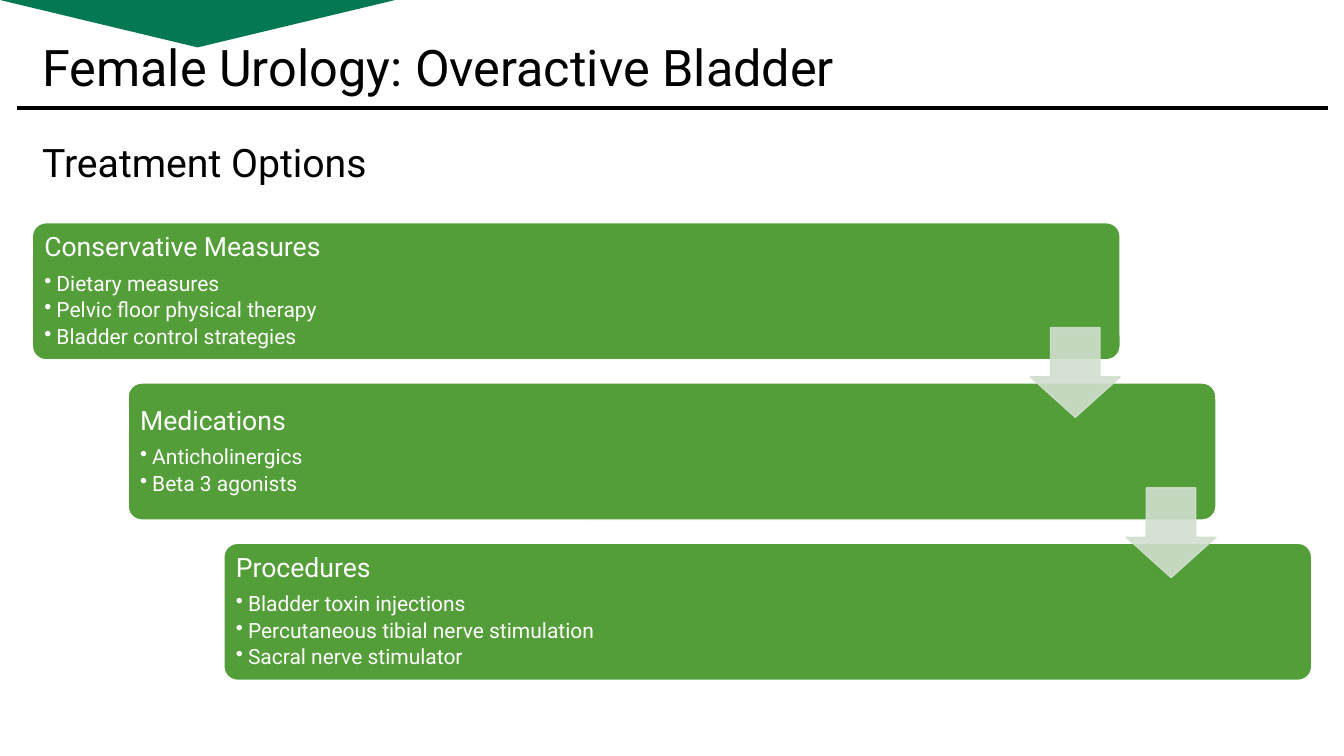
"""Build the overactive bladder treatment slide with its stepped cards."""
from dataclasses import dataclass

import lxml.etree
import pptx
import pptx.dml.color
import pptx.enum.shapes
import pptx.enum.text
import pptx.oxml.ns
import pptx.util

Inches = pptx.util.Inches
Pt = pptx.util.Pt
Shape = pptx.enum.shapes.MSO_SHAPE
Anchor = pptx.enum.text.MSO_ANCHOR
qn = pptx.oxml.ns.qn

FONT = "Roboto"
COLORS = {
    "banner": "047853",
    "card": "549E39",
    "arrow": "D1DFCE",
    "black": "000000",
    "white": "FFFFFF",
}
CARD_LEFT, CARD_TOP = 0.32, 2.21
CARD_WIDTH, CARD_HEIGHT = 10.79, 1.36
STEP_X, STEP_Y = 0.95, 1.59
ARROW_LEFT, ARROW_TOP, ARROW_SIZE = 10.22, 3.25, 0.89
BULLET_INDENT = Inches(0.12)


@dataclass(frozen=True)
class Treatment:
    heading: str
    options: tuple[str, ...]


TREATMENTS = (
    Treatment(
        "Conservative Measures",
        ("Dietary measures", "Pelvic floor physical therapy", "Bladder control strategies"),
    ),
    Treatment("Medications", ("Anticholinergics", "Beta 3 agonists")),
    Treatment(
        "Procedures",
        (
            "Bladder toxin injections",
            "Percutaneous tibial nerve stimulation",
            "Sacral nerve stimulator",
        ),
    ),
)


def rgb(name: str) -> pptx.dml.color.RGBColor:
    return pptx.dml.color.RGBColor.from_string(COLORS[name])


def add_span(para, text: str, size: float, color: str) -> None:
    span = para.add_run()
    span.text = text
    span.font.name = FONT
    span.font.size = Pt(size)
    span.font.color.rgb = rgb(color)


def add_label(page, text: str, left: float, top: float, width: float,
              height: float, size: float):
    box = page.shapes.add_textbox(Inches(left), Inches(top), Inches(width), Inches(height))
    add_span(box.text_frame.paragraphs[0], text, size, "black")
    return box.text_frame


def add_filled(page, kind, left: float, top: float, width: float, height: float, fill: str):
    shape = page.shapes.add_shape(
        kind, Inches(left), Inches(top), Inches(width), Inches(height)
    )
    shape.shadow.inherit = False
    shape.fill.solid()
    shape.fill.fore_color.rgb = rgb(fill)
    return shape


def add_banner(page) -> None:
    banner = add_filled(page, Shape.ISOSCELES_TRIANGLE, 0, 0, 3.92, 0.47, "banner")
    banner.rotation = 180
    banner.line.fill.background()


def add_title_rule(page) -> None:
    rule = page.shapes.add_connector(
        pptx.enum.shapes.MSO_CONNECTOR.STRAIGHT,
        Inches(0.17), Inches(1.07), Inches(13.17), Inches(1.07),
    )
    rule.line.color.rgb = rgb("black")
    rule.line.width = Pt(3)
    lxml.etree.SubElement(rule._element.spPr, qn("a:effectLst"))


def add_bullet(para) -> None:
    properties = para._p.get_or_add_pPr()
    properties.set("marL", str(BULLET_INDENT))
    properties.set("indent", str(-BULLET_INDENT))
    lxml.etree.SubElement(properties, qn("a:buChar")).set("char", "•")


def add_card(page, treatment: Treatment, step: int) -> None:
    card = add_filled(
        page, Shape.ROUNDED_RECTANGLE, CARD_LEFT + step * STEP_X,
        CARD_TOP + step * STEP_Y, CARD_WIDTH, CARD_HEIGHT, "card",
    )
    card.adjustments[0] = 0.1
    card.line.color.rgb = rgb("white")
    card.line.width = Pt(1)
    frame = card.text_frame
    frame.word_wrap = True
    frame.vertical_anchor = Anchor.MIDDLE
    frame.margin_left = frame.margin_right = Inches(0.08)
    frame.margin_top = frame.margin_bottom = Inches(0.08)
    heading = frame.paragraphs[0]
    heading.space_after = Pt(7.8)
    add_span(heading, treatment.heading, 19, "white")
    for option in treatment.options:
        para = frame.add_paragraph()
        para.level = 1
        add_bullet(para)
        para.space_after = Pt(2.7)
        add_span(para, option, 15, "white")
    for para in frame.paragraphs:
        para.alignment = pptx.enum.text.PP_ALIGN.LEFT
        para.line_spacing = 0.9


def add_arrow(page, step: int) -> None:
    arrow = add_filled(
        page, Shape.DOWN_ARROW, ARROW_LEFT + step * STEP_X,
        ARROW_TOP + step * STEP_Y, ARROW_SIZE, ARROW_SIZE, "arrow",
    )
    arrow.adjustments[0] = 0.55
    arrow.adjustments[1] = 0.45
    arrow.line.color.rgb = rgb("arrow")
    arrow.line.width = Pt(1)
    for color in arrow._element.spPr.iter(qn("a:srgbClr")):
        lxml.etree.SubElement(color, qn("a:alpha")).set("val", "90000")


def main() -> None:
    deck = pptx.Presentation()
    deck.slide_width, deck.slide_height = Inches(13.33), Inches(7.5)
    page = deck.slides.add_slide(deck.slide_layouts[6])

    add_banner(page)
    add_title_rule(page)
    title = add_label(page, "Female Urology: Overactive Bladder", 0.32, 0.4, 12.69, 0.59, 36)
    title.word_wrap = True
    title.vertical_anchor = Anchor.MIDDLE
    title.paragraphs[0].line_spacing = 0.9

    for step, treatment in enumerate(TREATMENTS):
        add_card(page, treatment, step)
    for step in range(len(TREATMENTS) - 1):
        add_arrow(page, step)

    subtitle = add_label(page, "Treatment Options", 0.32, 1.32, 3.44, 0.57, 28)
    subtitle.word_wrap = False
    subtitle.auto_size = pptx.enum.text.MSO_AUTO_SIZE.SHAPE_TO_FIT_TEXT

    deck.save("out.pptx")


if __name__ == "__main__":
    main()
